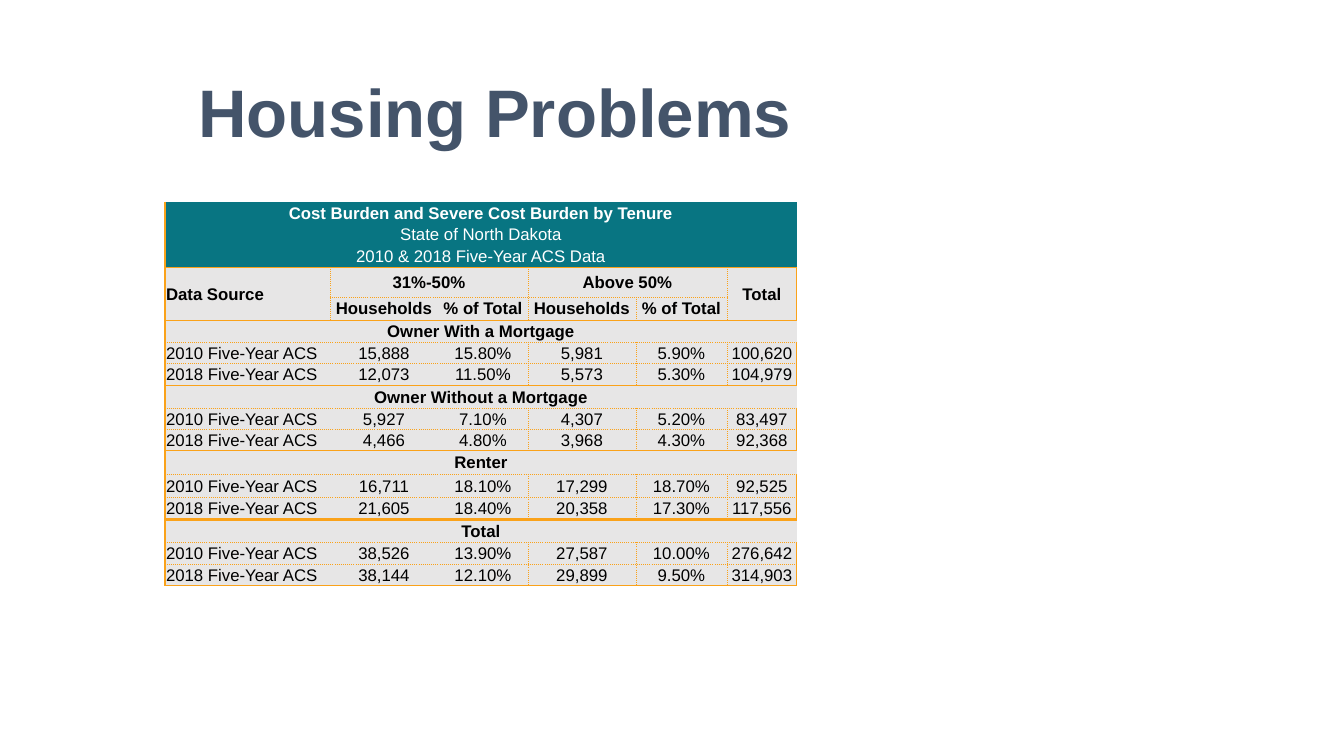
"""Builds the Housing Problems slide with its cost burden table."""
import pptx
import pptx.dml.color
import pptx.enum.text
import pptx.oxml
import pptx.oxml.ns
import pptx.util

SCALE = 914400 / 100.8
FONT = "Arial"
NAVY, TEAL, GREY, ORANGE = "44546A", "087582", "E7E6E6", "FAA21A"
WHITE, BLACK = "FFFFFF", "000000"
SOLID, THICK, DOT = (1, "solid"), (2, "solid"), (0.5, "sysDot")
NO_GRID = "{2D5ABB26-0587-4C30-8999-92F81FD0307C}"

COLS = [165, 108, 90, 108, 91, 70]
ROWS = [22, 21, 22, 30, 23, 22, 21, 22, 23, 21, 21, 24, 23, 22, 23, 22, 21]
BANNER = ["Cost Burden and Severe Cost Burden by Tenure",
          "State of North Dakota", "2010 & 2018 Five-Year ACS Data"]
HEADER = [["Data Source", "31%-50%", "", "Above 50%", "", "Total"],
          ["", "Households", "% of Total", "Households", "% of Total", ""]]
YEARS = ["2010 Five-Year ACS", "2018 Five-Year ACS"]
SECTIONS = {
    "Owner With a Mortgage": [
        ["15,888", "15.80%", "5,981", "5.90%", "100,620"],
        ["12,073", "11.50%", "5,573", "5.30%", "104,979"]],
    "Owner Without a Mortgage": [
        ["5,927", "7.10%", "4,307", "5.20%", "83,497"],
        ["4,466", "4.80%", "3,968", "4.30%", "92,368"]],
    "Renter": [
        ["16,711", "18.10%", "17,299", "18.70%", "92,525"],
        ["21,605", "18.40%", "20,358", "17.30%", "117,556"]],
    "Total": [
        ["38,526", "13.90%", "27,587", "10.00%", "276,642"],
        ["38,144", "12.10%", "29,899", "9.50%", "314,903"]],
}
SECTION_ROWS = [5, 8, 11, 14]
WIDE_ROWS = [0, 1, 2] + SECTION_ROWS
BOLD_ROWS = [0, 3, 4] + SECTION_ROWS
H_LINES = {3: SOLID, 4: DOT, 17: SOLID}
H_LINES.update({row: SOLID for row in SECTION_ROWS})
H_LINES.update({row + 1: DOT for row in SECTION_ROWS})
H_LINES[14] = THICK


def px(n):
    """Turn pixels into EMU."""
    return pptx.util.Emu(round(n * SCALE))


def rgb(value):
    """Turn a hex string into a colour."""
    return pptx.dml.color.RGBColor.from_string(value)


def style_text(p, size, color, bold, centred=True):
    """Format a paragraph and its runs."""
    align = pptx.enum.text.PP_ALIGN
    p.alignment = align.CENTER if centred else align.LEFT
    for r in p.runs:
        r.font.name = FONT
        r.font.size = pptx.util.Pt(size)
        r.font.bold = bold
        r.font.color.rgb = rgb(color)


def add_title(s, text, left, top, width, height):
    """Add the slide title in a text box."""
    tf = s.shapes.add_textbox(px(left), px(top), px(width), px(height)).text_frame
    tf.word_wrap = True
    tf.margin_top = px(37)
    tf.text = text
    style_text(tf.paragraphs[0], 48, NAVY, True)


def vertical_line(row, edge):
    """Give the line on a column edge in a row, if any."""
    if edge in (0, len(COLS)):
        return SOLID
    if row in WIDE_ROWS:
        return None
    return DOT if edge in (3, 5) or (row, edge) == (3, 1) else None


def horizontal_line(edge, col):
    """Give the line on a row edge in a column, if any."""
    if edge == 4 and col in (0, 5):
        return None
    return H_LINES.get(edge)


def set_borders(cell, row, col):
    """Draw the lines around one cell."""
    lines = {"L": vertical_line(row, col), "R": vertical_line(row, col + 1),
             "T": horizontal_line(row, col), "B": horizontal_line(row + 1, col)}
    shown = [(side, line) for side, line in lines.items() if line]
    tc_pr = cell._tc.get_or_add_tcPr()
    for i, (side, (width, dash)) in enumerate(shown):
        tc_pr.insert(i, pptx.oxml.parse_xml(
            f'<a:ln{side} {pptx.oxml.ns.nsdecls("a")} w="{pptx.util.Pt(width)}">'
            f'<a:solidFill><a:srgbClr val="{ORANGE}"/></a:solidFill>'
            f'<a:prstDash val="{dash}"/></a:ln{side}>'))


def fill_cell(cell, text, row, col):
    """Set the text, fill and borders of one cell."""
    banner = row < len(BANNER)
    cell.margin_left = cell.margin_right = cell.margin_top = px(1)
    cell.margin_bottom = 0
    cell.vertical_anchor = pptx.enum.text.MSO_ANCHOR.MIDDLE
    cell.fill.solid()
    cell.fill.fore_color.rgb = rgb(TEAL if banner else GREY)
    if text:
        cell.text_frame.text = text
        style_text(cell.text_frame.paragraphs[0], 12, WHITE if banner else BLACK,
                   row in BOLD_ROWS, col > 0 or row in WIDE_ROWS)
    set_borders(cell, row, col)


def table_rows():
    """List the text of every table row."""
    blank = [""] * (len(COLS) - 1)
    rows = [[line] + blank for line in BANNER] + HEADER
    for name, values in SECTIONS.items():
        rows.append([name] + blank)
        rows += [[year] + line for year, line in zip(YEARS, values)]
    return rows


def add_burden_table(s, left, top):
    """Add the cost burden table."""
    table = s.shapes.add_table(len(ROWS), len(COLS), px(left), px(top),
                               px(sum(COLS)), px(sum(ROWS))).table
    table.first_row = table.horz_banding = False
    table._tbl.tblPr.find(pptx.oxml.ns.qn("a:tableStyleId")).text = NO_GRID
    for column, width in zip(table.columns, COLS):
        column.width = px(width)
    for line, height in zip(table.rows, ROWS):
        line.height = px(height)
    for row, texts in enumerate(table_rows()):
        for col, text in enumerate(texts):
            fill_cell(table.cell(row, col), text, row, col)
    for row in WIDE_ROWS:
        table.cell(row, 0).merge(table.cell(row, 5))
    for col in (0, 5):
        table.cell(3, col).merge(table.cell(4, col))
    for col in (1, 3):
        table.cell(3, col).merge(table.cell(3, col + 1))


def main():
    """Build and save the slide."""
    prs = pptx.Presentation()
    prs.slide_width, prs.slide_height = px(1344), px(756)
    s = prs.slides.add_slide(prs.slide_layouts[6])
    add_title(s, "Housing Problems", 28, 33, 934, 700)
    add_burden_table(s, 165, 202)
    prs.save("out.pptx")


if __name__ == "__main__":
    main()
